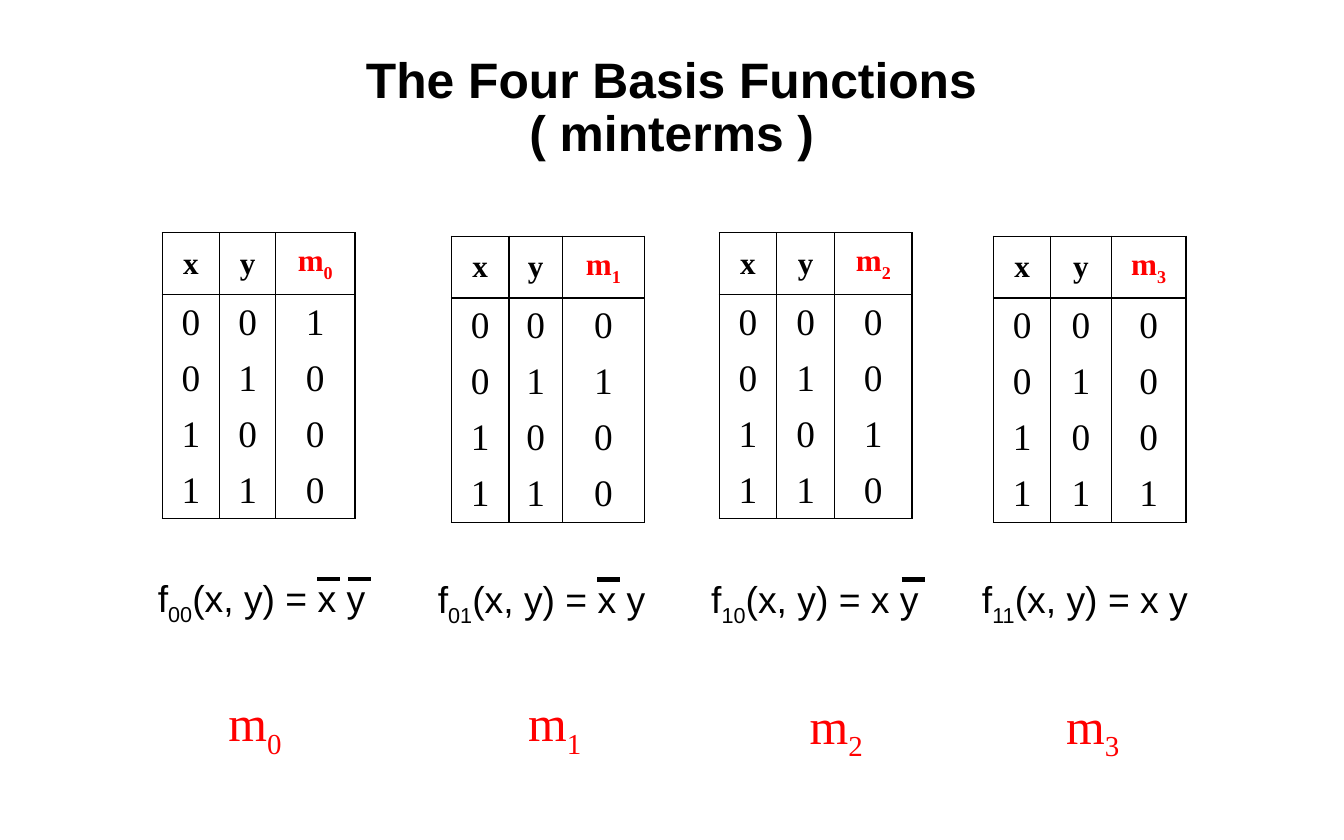
from lxml.etree import SubElement
from pptx import Presentation
from pptx.dml.color import RGBColor
from pptx.enum.text import MSO_ANCHOR, MSO_AUTO_SIZE, PP_ALIGN
from pptx.enum.shapes import MSO_CONNECTOR
from pptx.oxml.ns import qn
from pptx.util import Cm, Pt

BLACK = RGBColor(0, 0, 0)
RED = RGBColor(0xFF, 0, 0)
SANS, SERIF = "Arial", "Times New Roman"

# Heading lines: text, left, top, width
HEADINGS = [("The Four Basis Functions", 0, 0.84, 30.48),
            ("( minterms )", 2.54, 2.03, 25.4)]
INPUTS = [(0, 0), (0, 1), (1, 0), (1, 1)]

# One entry per minterm; y_width is the width of the table's y column
MINTERMS = [
    dict(table=(3.68, 5.28), y_width=1.27, formula=(3.33, 12.93), label=(4.93, 15.57)),
    dict(table=(10.24, 5.36), y_width=1.22, formula=(9.68, 12.95), label=(11.73, 15.57)),
    dict(table=(16.31, 5.28), y_width=1.32, formula=(15.88, 12.95), label=(18.11, 15.62)),
    dict(table=(22.53, 5.36), y_width=1.37, formula=(22.02, 12.95), label=(23.93, 15.62)),
]

TABLE_WIDTH, X_WIDTH = 4.37, 1.3
HEADER_HEIGHT, ROW_HEIGHT = 1.4, 1.27
BAR_OFFSETS = (3.87, 4.57)  # from the formula's left edge to the bars over x and y
BAR_DROP, BAR_WIDTH = 0.2, 0.52


def write(paragraph, parts, font_name, size, color=BLACK, bold=False):
    """Write text parts, setting every second one as a subscript."""
    font = paragraph.font
    font.name, font.size, font.bold = font_name, Pt(size), bold
    font.color.rgb = color
    for i, part in enumerate(parts):
        run = paragraph.add_run()
        run.text = part
        if i % 2:
            run._r.get_or_add_rPr().set("baseline", "-25000")


def add_label(shapes, position, size, parts, *style):
    box = shapes.add_textbox(*map(Cm, position + size))
    frame = box.text_frame
    frame.word_wrap = False
    frame.auto_size = MSO_AUTO_SIZE.SHAPE_TO_FIT_TEXT
    write(frame.paragraphs[0], parts, *style)


def set_borders(cell, visible):
    properties = cell._tc.get_or_add_tcPr()
    for side in "LRTB":
        line = SubElement(properties, qn(f"a:ln{side}"), w=str(Pt(1)))
        if side in visible:
            fill = SubElement(line, qn("a:solidFill"))
            SubElement(fill, qn("a:srgbClr"), val=str(BLACK))
        else:
            SubElement(line, qn("a:noFill"))


def add_truth_table(shapes, index, position, y_width):
    rows = [[["x"], ["y"], ["m", str(index)]]]
    for number, inputs in enumerate(INPUTS):
        rows.append([[str(value)] for value in (*inputs, int(number == index))])
    height = HEADER_HEIGHT + ROW_HEIGHT * len(INPUTS)
    table = shapes.add_table(len(rows), 3, *map(Cm, position + (TABLE_WIDTH, height))).table
    table.first_row = table.horz_banding = False
    widths = (X_WIDTH, y_width, TABLE_WIDTH - X_WIDTH - y_width)
    for column, width in zip(table.columns, widths):
        column.width = Cm(width)
    for r, row in enumerate(rows):
        header = r == 0
        table.rows[r].height = Cm(HEADER_HEIGHT if header else ROW_HEIGHT)
        visible = "LRTB" if header else "LR" + "T" * (r == 1) + "B" * (r == len(INPUTS))
        for c, parts in enumerate(row):
            cell = table.cell(r, c)
            cell.vertical_anchor = MSO_ANCHOR.MIDDLE
            set_borders(cell, visible)
            cell.fill.background()
            paragraph = cell.text_frame.paragraphs[0]
            paragraph.alignment = PP_ALIGN.CENTER
            paragraph.space_before = Pt(6 if header else 12)
            color = RED if header and c == 2 else BLACK
            write(paragraph, parts, SERIF, 20 if header else 24, color, header)


def add_formula(shapes, inputs, position):
    """Add the product of x and y with a bar over each input that is 0."""
    if 0 in inputs:
        shapes = shapes.add_group_shape().shapes
    subscript = "".join(map(str, inputs))
    add_label(shapes, position, (5.32, 1.28), ["f", subscript, "(x, y) = x y"], SANS, 24)
    left, top = position
    y = Cm(top + BAR_DROP)
    for value, offset in zip(inputs, BAR_OFFSETS):
        if value == 0:
            start = left + offset
            bar = shapes.add_connector(MSO_CONNECTOR.STRAIGHT, Cm(start), y,
                                       Cm(start + BAR_WIDTH), y)
            bar.line.color.rgb = BLACK
            bar.line.width = Pt(3)
            SubElement(bar._element.spPr, qn("a:effectLst"))


def main():
    deck = Presentation()
    deck.slide_width, deck.slide_height = Cm(30.48), Cm(19.05)
    shapes = deck.slides.add_slide(deck.slide_layouts[6]).shapes

    for text, left, top, width in HEADINGS:
        frame = shapes.add_textbox(Cm(left), Cm(top), Cm(width), Cm(1.9)).text_frame
        frame.word_wrap = True
        frame.vertical_anchor = MSO_ANCHOR.MIDDLE
        frame.paragraphs[0].alignment = PP_ALIGN.CENTER
        write(frame.paragraphs[0], [text], SANS, 32, BLACK, True)

    for index, (inputs, minterm) in enumerate(zip(INPUTS, MINTERMS)):
        add_truth_table(shapes, index, minterm["table"], minterm["y_width"])
        add_formula(shapes, inputs, minterm["formula"])
        add_label(shapes, minterm["label"], (1.78, 1.63), ["m", str(index)], SERIF, 32, RED)

    deck.save("out.pptx")


if __name__ == "__main__":
    main()
